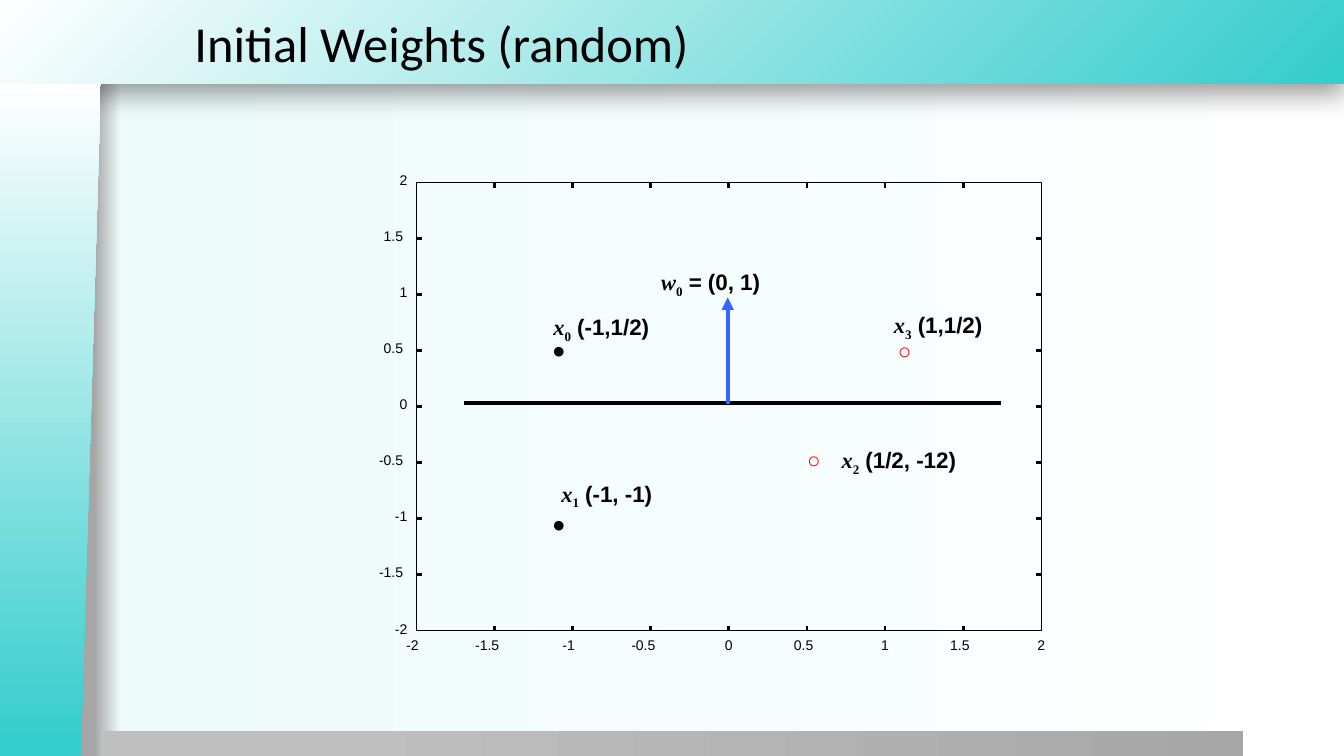
"""Build the slide that plots the initial random weights with four sample points."""
from lxml.etree import SubElement
from pptx import Presentation
from pptx.dml.color import RGBColor
from pptx.enum.shapes import MSO_CONNECTOR, MSO_SHAPE
from pptx.enum.text import MSO_ANCHOR
from pptx.oxml.ns import qn
from pptx.util import Pt

WIDTH, HEIGHT = 960, 540
TITLE = "Initial Weights (random)"
TICKS = ["-2", "-1.5", "-1", "-0.5", "0", "0.5", "1", "1.5", "2"]
VECTORS = [
    ("x", "2", " (1/2, -12)", (601.2, 319, 88.6, 19.4)),
    ("x", "3", " (1,1/2)", (638.6, 222.5, 64.8, 19.4)),
    ("x", "0", " (-1,1/2)", (395.3, 223.9, 74.9, 19.4)),
    ("x", "1", " (-1, -1)", (401, 342.7, 71.3, 19.4)),
    ("w", "0", " = (0, 1)", (472.3, 191.5, 77, 19.4)),
]
SAMPLES = [
    ("●", 402.8, 250.2, "000000"),
    ("●", 402.8, 374, "000000"),
    ("○", 585, 328.7, "FF0000"),
    ("○", 649.8, 250.6, "FF0000"),
]
BOUNDARY = (331.2, 288, 715, 288)
WEIGHT = (519.8, 288.7, 519.8, 212.4)
PLOT_X, PLOT_Y, PLOT_W, PLOT_H = 297.4, 130.3, 446.4, 320.4
TICK_LENGTH = 3.8
LABEL_HEIGHT = 12.2
GLYPHS = {"-": 3.33, ".": 2.78}
DIGIT = 5.56


def rgb(color):
    return RGBColor.from_string(color)


def pts(values):
    return [Pt(value) for value in values]


def add_gradient(fill, owner, stops, angle=0, corner=False):
    fill.gradient()
    gradient = owner.find(".//" + qn("a:gradFill"))
    for child in list(gradient):
        gradient.remove(child)
    gradient.set("rotWithShape", "1")
    stop_list = SubElement(gradient, qn("a:gsLst"))
    for position, color in stops:
        stop = SubElement(stop_list, qn("a:gs"), pos=str(position * 1000))
        SubElement(stop, qn("a:srgbClr"), val=color)
    if corner:
        circle = SubElement(gradient, qn("a:path"))
        circle.set("path", "circle")
        SubElement(circle, qn("a:fillToRect"), l="100000", t="100000")
    else:
        SubElement(gradient, qn("a:lin"), ang=str(angle * 60000), scaled="0")


def add_panel(slide, kind, box, stops, corner=False):
    panel = slide.shapes.add_shape(kind, *pts(box))
    panel.shadow.inherit = False
    panel.line.fill.background()
    add_gradient(panel.fill, panel.element, stops, corner=corner)
    return panel


def add_text(slide, runs, box, size=10, font="Arial", color="000000", bold=False,
             margins=(0, 0), anchor=MSO_ANCHOR.TOP, wrap=False):
    label = slide.shapes.add_textbox(*pts(box))
    frame = label.text_frame
    frame.word_wrap = wrap
    frame.vertical_anchor = anchor
    frame.margin_left = frame.margin_right = Pt(margins[0])
    frame.margin_top = frame.margin_bottom = Pt(margins[1])
    if isinstance(runs, str):
        runs = [(runs, {})]
    for words, style in runs:
        run = frame.paragraphs[0].add_run()
        run.text = words
        run.font.size = Pt(size)
        run.font.name = style.get("font", font)
        run.font.bold = bold
        run.font.italic = style.get("italic", False)
        run.font.color.rgb = rgb(color)
        if "baseline" in style:
            run.font._element.set("baseline", str(style["baseline"] * 1000))


def add_line(slide, ends, width=0, color="000000", arrow=False):
    line = slide.shapes.add_connector(MSO_CONNECTOR.STRAIGHT, *pts(ends))
    line.line.color.rgb = rgb(color)
    line.line.width = Pt(width)
    if arrow:
        SubElement(line.line._get_or_add_ln(), qn("a:tailEnd"), type="triangle")
    SubElement(line.element.spPr, qn("a:effectLst"))


def add_backdrop(slide):
    add_gradient(slide.background.fill, slide.element,
                 [(7, "A6A6A6"), (9, "EDFBFB"), (100, "FFFFFF")])
    banner = add_panel(slide, MSO_SHAPE.RECTANGLE, (-0.5, 0, 960.5, 60),
                       [(0, "34CCCC"), (100, "FFFFFF")], corner=True)
    effects = banner.element.spPr.find(qn("a:effectLst"))
    shadow = SubElement(effects, qn("a:outerShdw"), blurRad=str(Pt(20)),
                        dist=str(Pt(6)), dir="5400000", algn="t", rotWithShape="0")
    black = SubElement(shadow, qn("a:srgbClr"), val="000000")
    SubElement(black, qn("a:alpha"), val="40000")
    add_panel(slide, MSO_SHAPE.RECTANGLE, (72, 522, 816, 18.5),
              [(20, "BFBFBF"), (100, "A7A7A7")])
    side = add_panel(slide, MSO_SHAPE.FLOWCHART_MANUAL_INPUT, (-204.5, 264.2, 481, 72),
                     [(1, "34CCCC"), (100, "FFFFFF")])
    side.rotation = 270
    side.element.spPr.find(qn("a:xfrm")).set("flipV", "1")


def add_axes(slide):
    right, bottom = PLOT_X + PLOT_W, PLOT_Y + PLOT_H
    border = slide.shapes.add_shape(MSO_SHAPE.RECTANGLE,
                                    *pts((PLOT_X, PLOT_Y, PLOT_W, PLOT_H)))
    border.shadow.inherit = False
    border.fill.background()
    border.line.color.rgb = rgb("000000")
    border.line.width = Pt(0)
    last = len(TICKS) - 1
    for index, value in enumerate(TICKS):
        x = PLOT_X + PLOT_W * index / last
        y = bottom - PLOT_H * index / last
        width = sum(GLYPHS.get(glyph, DIGIT) for glyph in value)
        shift = sum(GLYPHS.get(glyph, 0) for glyph in value) * 0.85
        indent = 3 if "." in value else 0
        add_text(slide, value, (x - shift - width / 2, 454.3, width, LABEL_HEIGHT))
        add_text(slide, value, (291 - indent - width, y - 7.8, width, LABEL_HEIGHT))
        if 0 < index < last:
            add_line(slide, (x, bottom, x, bottom - TICK_LENGTH))
            add_line(slide, (x, PLOT_Y, x, PLOT_Y + TICK_LENGTH))
            add_line(slide, (PLOT_X, y, PLOT_X + TICK_LENGTH, y))
            add_line(slide, (right, y, right - TICK_LENGTH, y))


def main():
    deck = Presentation()
    deck.slide_width, deck.slide_height = pts((WIDTH, HEIGHT))
    slide = deck.slides.add_slide(deck.slide_layouts[6])
    add_backdrop(slide)
    add_axes(slide)
    add_line(slide, BOUNDARY, width=3)
    add_line(slide, WEIGHT, width=3, color="3366FF", arrow=True)
    serif = "Times New Roman"
    for letter, number, value, box in VECTORS:
        runs = [(letter, {"font": serif, "italic": True}),
                (number, {"font": serif, "baseline": -25}), (value, {})]
        add_text(slide, runs, box, size=16, bold=True)
    for mark, x, y, color in SAMPLES:
        add_text(slide, mark, (x - 15.5, y - 13.3, 31, 26.6), size=16, font=serif,
                 color=color, margins=(7.2, 3.6))
    add_text(slide, TITLE, (131.8, 0, 828.5, 60), size=36, font="Calibri",
             margins=(7.2, 3.6), anchor=MSO_ANCHOR.MIDDLE, wrap=True)
    deck.save("out.pptx")


if __name__ == "__main__":
    main()
